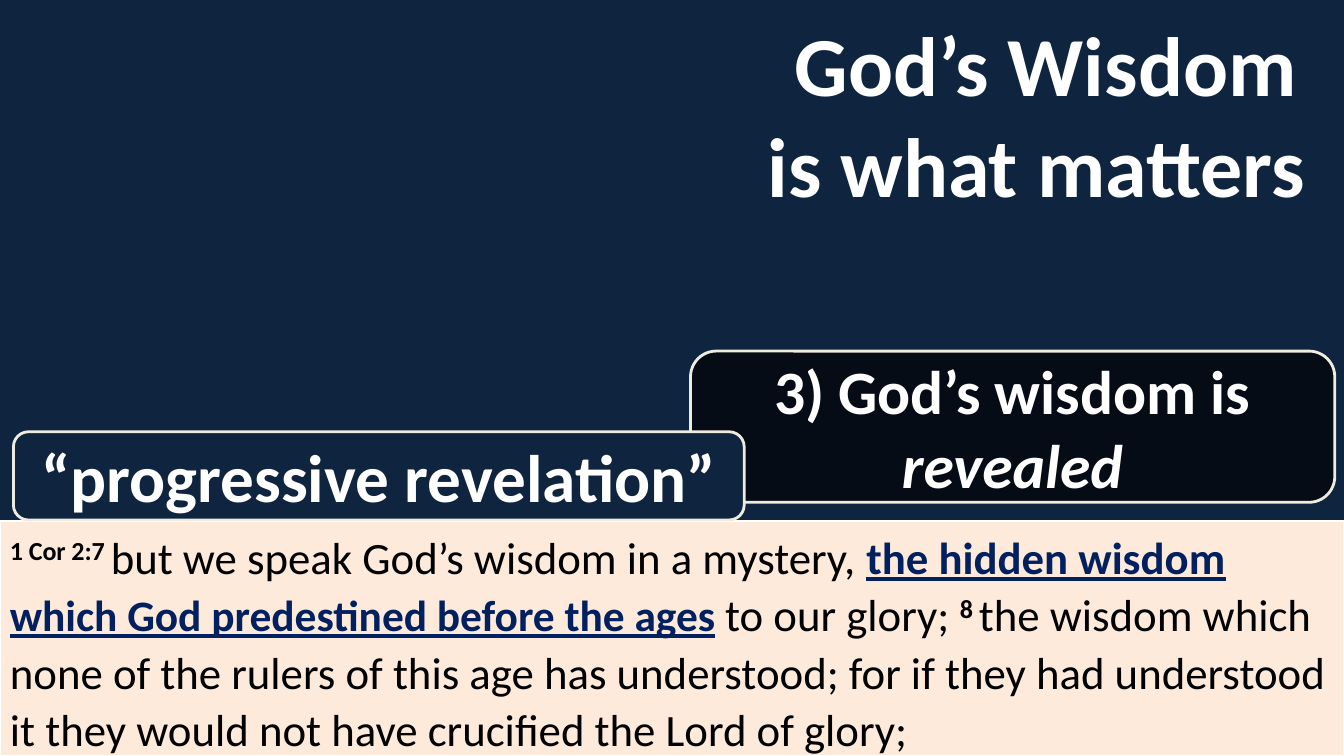
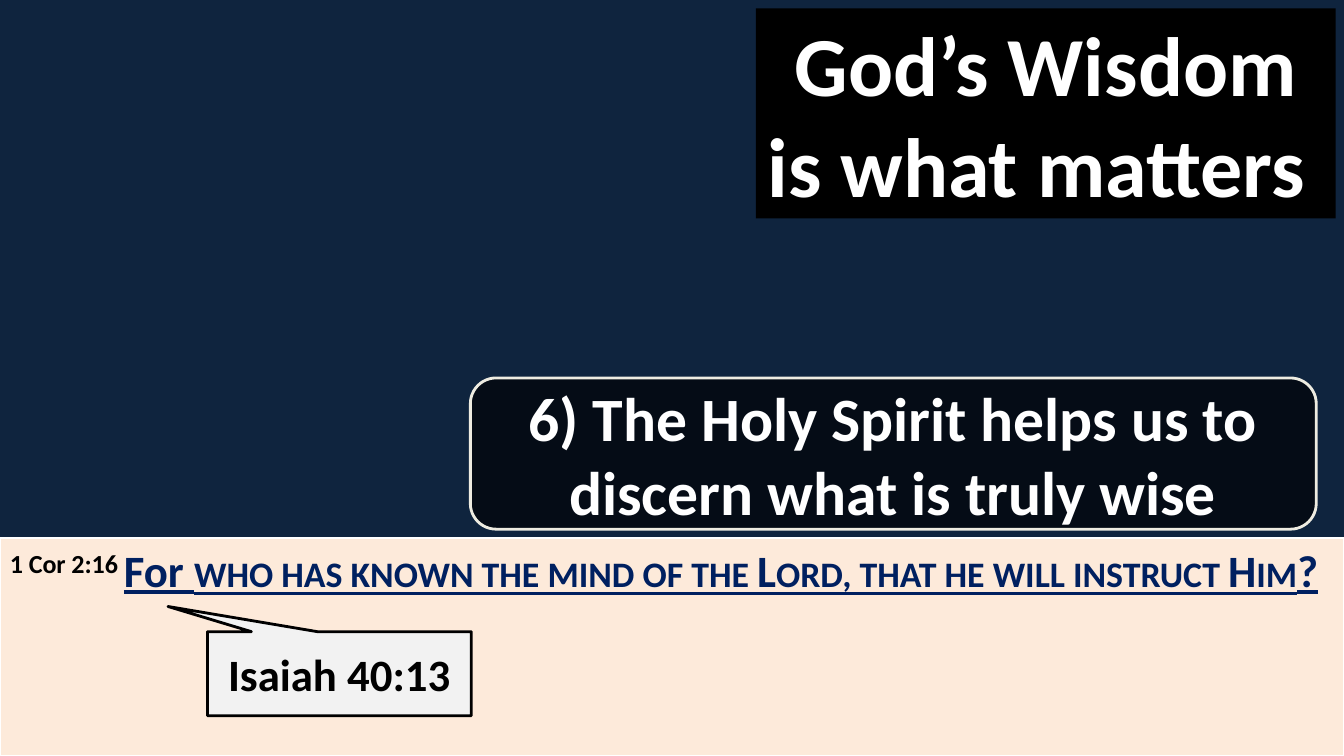
import pptx
import pptx.util
import pptx.dml.color
import pptx.enum.shapes
import pptx.enum.text
import pptx.oxml.ns
import lxml.etree

RGBColor = pptx.dml.color.RGBColor
SHAPE = pptx.enum.shapes.MSO_SHAPE
ANCHOR = pptx.enum.text.MSO_ANCHOR
ALIGN = pptx.enum.text.PP_ALIGN

NAVY = RGBColor(0x0F, 0x24, 0x3E)
INK = RGBColor(0x00, 0x20, 0x60)
BLACK = RGBColor(0, 0, 0)
WHITE = RGBColor(0xFF, 0xFF, 0xFF)
IVORY = RGBColor(0xEE, 0xEC, 0xE1)
PEACH = RGBColor(0xFD, 0xEA, 0xDA)
PALE = RGBColor(0xF2, 0xF2, 0xF2)
FONT = "Calibri"

# The slide is a grid of 16 columns and 9 rows
COLUMNS, ROWS = 16, 9
deck = pptx.Presentation()
deck.slide_width = pptx.util.Inches(13.33)
deck.slide_height = pptx.util.Inches(7.5)
column = deck.slide_width / COLUMNS
row = deck.slide_height / ROWS

ROUND_TAIL = (-0.22, 0.5, 0.17)
TITLE_AREA = (9, 0.1, 6.9, 2.5)
VERSE_REF = dict(bold=True, baseline=30)
VERSE_KEY = dict(bold=True, underline=True, color=INK)


def panel(slide, area, shape_type, fill=None, alpha=None, line=None, width=2, adjust=()):
    """Place a shape, or a plain text box if no fill is given."""
    left, top, wide, high = area
    box = [int(v) for v in (left * column, top * row, wide * column, high * row)]
    if fill is None:
        return slide.shapes.add_textbox(*box)
    shape = slide.shapes.add_shape(shape_type, *box)
    shape.shadow.inherit = False
    for index, value in enumerate(adjust):
        shape.adjustments[index] = value
    shape.fill.solid()
    shape.fill.fore_color.rgb = fill
    if alpha:
        color = shape.fill._xPr.find(".//" + pptx.oxml.ns.qn("a:srgbClr"))
        lxml.etree.SubElement(color, pptx.oxml.ns.qn("a:alpha"), val=str(alpha * 1000))
    if line is None:
        shape.line.fill.background()
    else:
        shape.line.color.rgb = line
        shape.line.width = pptx.util.Pt(width)
    return shape


def write(shape, *runs, size=32, color=WHITE, bold=True, align=ALIGN.CENTER,
          anchor=ANCHOR.MIDDLE, spacing=None):
    """Fill a shape with runs, each a string or a (string, format) pair."""
    frame = shape.text_frame
    frame.word_wrap = True
    frame.vertical_anchor = anchor
    paragraph = frame.paragraphs[0]
    paragraph.alignment = align
    paragraph.line_spacing = spacing
    for item in runs:
        text, look = (item, {}) if isinstance(item, str) else item
        run = paragraph.add_run()
        run.text = text
        run.font.name = FONT
        run.font.size = pptx.util.Pt(look.get("size", size))
        run.font.color.rgb = look.get("color", color)
        run.font.bold = look.get("bold", bold)
        run.font.italic = look.get("italic")
        run.font.underline = look.get("underline")
        if "baseline" in look:
            run.font._element.set("baseline", str(look["baseline"] * 1000))
        if look.get("small_caps"):
            run.font._element.set("cap", "small")


# What the slides share: title, numbered point and verse band
pages = [
    dict(
        title_fill=None,
        point_area=(8.22, 4.18, 7.67, 1.8),
        point=["3) God’s wisdom is ", ("revealed", dict(italic=True))],
        verse_area=(0, 6.2, COLUMNS, 2.8),
        verse_spacing=1.07,
        verse=[
            ("1 Cor 2:7 ", VERSE_REF),
            "but we speak God’s wisdom in a mystery, ",
            ("the hidden wisdom ", VERSE_KEY),
            ("which God predestined before the ages", dict(VERSE_KEY, size=31)),
            " to our glory; ",
            ("8 ", VERSE_REF),
            "the wisdom which none of the rulers of this age has understood; "
            "for if they had understood it they would not have crucified "
            "the Lord of glory;",
        ],
    ),
    dict(
        title_fill=BLACK,
        point_area=(5.6, 4.5, 10.07, 1.8),
        point=["6) The Holy Spirit helps us to discern what is truly wise"],
        verse_area=(0, 6.4, COLUMNS, 2.6),
        verse_spacing=None,
        verse=[
            ("1 Cor 2:16 ", VERSE_REF),
            ("For ", VERSE_KEY),
            ("who has known the mind of the Lord, that he will instruct Him",
             dict(VERSE_KEY, small_caps=True)),
            ("?", VERSE_KEY),
        ],
    ),
]

slides = []
for page in pages:
    slide = deck.slides.add_slide(deck.slide_layouts[6])
    slides.append(slide)
    slide.background.fill.solid()
    slide.background.fill.fore_color.rgb = NAVY

    verse = panel(slide, page["verse_area"], SHAPE.RECTANGLE, PEACH, line=WHITE, width=1.5)
    write(verse, *page["verse"], color=BLACK, bold=False, align=ALIGN.LEFT,
          anchor=ANCHOR.TOP, spacing=page["verse_spacing"])

    title = panel(slide, TITLE_AREA, SHAPE.RECTANGLE, page["title_fill"])
    write(title, "God’s Wisdom is what matters ", size=60)

    point = panel(slide, page["point_area"], SHAPE.ROUNDED_RECTANGULAR_CALLOUT, BLACK,
                  alpha=64, line=IVORY, adjust=ROUND_TAIL)
    write(point, *page["point"], size=44)

# Key term on the first slide
key_term = panel(slides[0], (0.16, 5.14, 8.7, 1.05), SHAPE.ROUNDED_RECTANGULAR_CALLOUT,
                 NAVY, line=IVORY, adjust=ROUND_TAIL)
write(key_term, "“progressive revelation”", size=48)

# Quoted passage on the second slide
quoted = panel(slides[1], (2.47, 7.52, 3.14, 1), SHAPE.RECTANGULAR_CALLOUT, PALE,
               line=BLACK, adjust=(-0.65, -0.8))
write(quoted, "Isaiah 40:13", color=BLACK)

deck.save("out.pptx")
